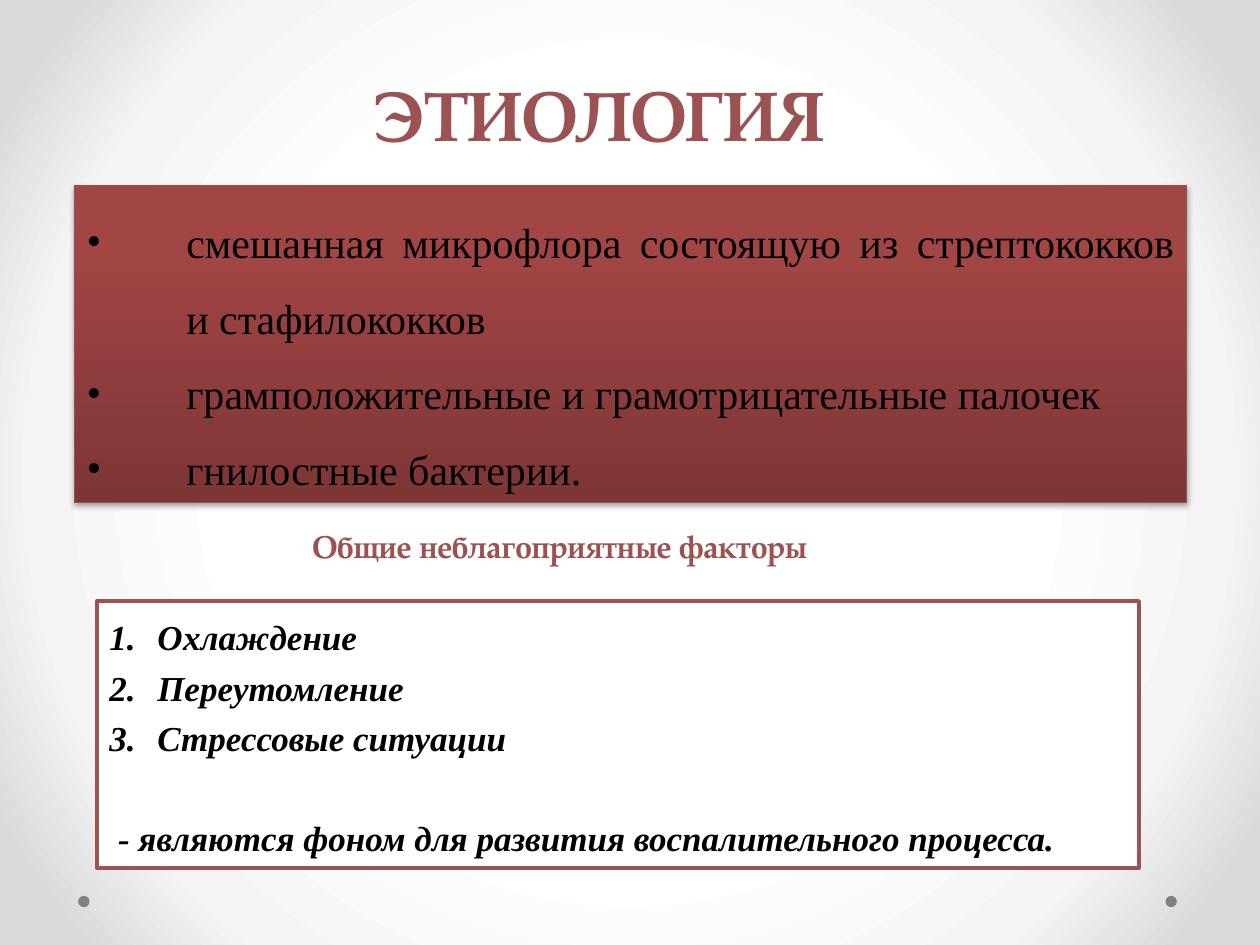
from lxml import etree
from pptx import Presentation, util as u
from pptx.dml.color import RGBColor
from pptx.enum import shapes, text
from pptx.oxml import parse_xml
from pptx.oxml.ns import nsdecls, qn

COLUMNS, ROWS = 100, 75
WIDTH, HEIGHT = u.Inches(10), u.Inches(7.5)
SERIF, HEADING = "Times New Roman", "TeX Gyre Pagella"
COLORS = {
    "accent": "9C5252", "edge": "9A4E4E", "ink": "000000", "paper": "FFFFFF",
    "dot": "808080", "mist": "F4F4F4", "rim": "DADADA",
    "dark": "7D3535", "red": "A24545", "bright": "A44343",
}
RADIAL = ('<a:path path="circle"><a:fillToRect l="50000" t="50000" '
          'r="50000" b="50000"/></a:path>')
UPWARD = '<a:lin ang="16200000" scaled="0"/>'


def color(name):
    return RGBColor.from_string(COLORS[name])


def place(box):
    left, top, width, height = box
    return (int(WIDTH * left / COLUMNS), int(HEIGHT * top / ROWS),
            int(WIDTH * width / COLUMNS), int(HEIGHT * height / ROWS))


def set_gradient(properties, stops, direction):
    marks = "".join(
        f'<a:gs pos="{share * 1000}"><a:srgbClr val="{COLORS[name]}"/></a:gs>'
        for share, name in stops)
    gradient = parse_xml(f'<a:gradFill {nsdecls("a")} rotWithShape="1">'
                         f'<a:gsLst>{marks}</a:gsLst>{direction}</a:gradFill>')
    properties.replace(properties.find(qn("a:solidFill")), gradient)


def add_panel(page, box, fill, edge=None, weight=0,
              kind=shapes.MSO_SHAPE.RECTANGLE):
    panel = page.shapes.add_shape(kind, *place(box))
    panel.fill.solid()
    panel.fill.fore_color.rgb = color(fill)
    if edge:
        panel.line.color.rgb = color(edge)
        panel.line.width = u.Pt(weight)
    else:
        panel.line.fill.background()
    panel.shadow.inherit = False
    panel.text_frame.word_wrap = True
    panel.text_frame.vertical_anchor = text.MSO_ANCHOR.TOP
    return panel


def add_span(para, words, size, font, ink, bold=False, italic=False):
    span = para.add_run()
    span.text = words
    span.font.size = u.Pt(size)
    span.font.name = font
    span.font.bold = bold
    span.font.italic = italic
    span.font.color.rgb = color(ink)


def add_paragraphs(frame, lines, align, spacing, indent, mark, **style):
    for index, words in enumerate(lines):
        para = frame.add_paragraph() if index else frame.paragraphs[0]
        para.alignment = align
        para.line_spacing = spacing
        properties = para._p.get_or_add_pPr()
        properties.set("marL", str(u.Inches(indent)))
        properties.set("indent", str(-u.Inches(indent)))
        if mark:
            tag, attribute, value = mark
            etree.SubElement(properties, qn("a:buFont"), typeface=SERIF)
            etree.SubElement(properties, qn(tag)).set(attribute, value)
        add_span(para, words, font=SERIF, ink="ink", **style)
    return para


def add_background(page):
    page.background.fill.solid()
    set_gradient(page.element.find(".//" + qn("p:bgPr")),
                 [(50, "paper"), (76, "mist"), (92, "rim")], RADIAL)
    for left in (92.5, 6.2):
        add_panel(page, (left, 71.1, 0.9, 0.9), "dot",
                  kind=shapes.MSO_SHAPE.OVAL)


def add_heading(page, box, words, size):
    frame = page.shapes.add_textbox(*place(box)).text_frame
    frame.word_wrap = True
    add_span(frame.paragraphs[0], words, size, HEADING, "accent", bold=True)


def add_causes(page, box, lines):
    panel = add_panel(page, box, "red", "edge", 0.75)
    properties = panel._element.spPr
    set_gradient(properties, [(0, "dark"), (80, "red"), (100, "bright")], UPWARD)
    properties.find(qn("a:effectLst")).append(parse_xml(
        f'<a:outerShdw {nsdecls("a")} blurRad="{u.Pt(3.1)}" dist="{u.Pt(1.8)}" '
        f'dir="5400000" rotWithShape="0"><a:srgbClr val="{COLORS["ink"]}">'
        '<a:alpha val="35000"/></a:srgbClr></a:outerShdw>'))
    add_paragraphs(panel.text_frame, lines, text.PP_ALIGN.JUSTIFY, 1.5, 0.79,
                   ("a:buChar", "char", "•"), size=24)


def add_factors(page, box, lines, closing):
    frame = add_panel(page, box, "paper", "accent", 2.25).text_frame
    style = dict(size=20, bold=True, italic=True)
    add_paragraphs(frame, lines, text.PP_ALIGN.LEFT, 1.2, 0.38,
                   ("a:buAutoNum", "type", "arabicPeriod"), **style)
    para = frame.add_paragraph()
    para.alignment = text.PP_ALIGN.LEFT
    para.line_spacing = 1.2
    para.space_before = u.Pt(28.5)
    add_span(para, " " + closing, font=SERIF, ink="ink", **style)


def main():
    deck = Presentation()
    deck.slide_width, deck.slide_height = WIDTH, HEIGHT
    page = deck.slides.add_slide(deck.slide_layouts[6])
    add_background(page)
    add_heading(page, (28.7, 5.2, 54.3, 7.7), "ЭТИОЛОГИЯ", 40)
    add_causes(page, (5.9, 14.7, 88.3, 25.2), [
        "смешанная микрофлора состоящую из стрептококков и стафилококков",
        "грамположительные и грамотрицательные палочек",
        "гнилостные бактерии."])
    add_heading(page, (23.8, 41.3, 50, 4), "Общие неблагоприятные факторы", 18)
    add_factors(page, (7.7, 47.7, 82.7, 21.2),
                ["Охлаждение", "Переутомление", "Стрессовые ситуации"],
                "- являются фоном для развития воспалительного процесса.")
    deck.save("out.pptx")


if __name__ == "__main__":
    main()
